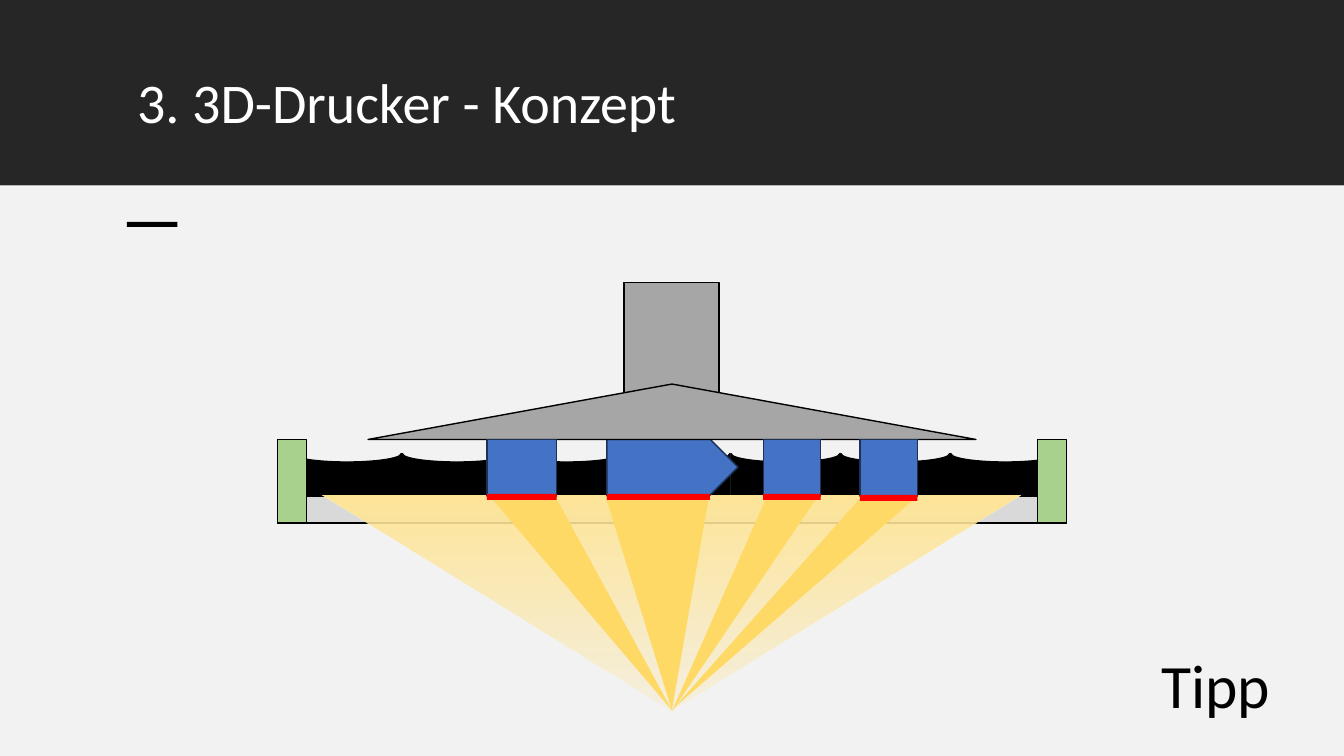
from lxml import etree
from pptx import Presentation
from pptx import util as u
from pptx.dml.color import RGBColor
from pptx.enum import shapes, text
from pptx.oxml import ns

PX = 9144
KIND = shapes.MSO_SHAPE

deck = Presentation()
deck.slide_width, deck.slide_height = 1333 * PX, 750 * PX
page = deck.slides.add_slide(deck.slide_layouts[5])


def add_part(kind, left, top, width, height, fill, line=None, turn=0, flip=False):
    part = page.shapes.add_shape(kind, left * PX, top * PX, width * PX, height * PX)
    part.shadow.inherit = False
    part.fill.solid()
    part.fill.fore_color.rgb = RGBColor.from_string(fill)
    if line:
        part.line.color.rgb = RGBColor.from_string(line)
        part.line.width = u.Pt(1)
    else:
        part.line.fill.background()
    part.rotation = turn
    if flip:
        part._element.spPr.xfrm.set("flipV", "1")
    return part


def write(box, left, top, width, height, words, size, color):
    box.left, box.top, box.width, box.height = left * PX, top * PX, width * PX, height * PX
    frame = box.text_frame
    frame.word_wrap = True
    frame.auto_size = text.MSO_AUTO_SIZE.NONE
    frame.vertical_anchor = text.MSO_ANCHOR.TOP
    frame.text = words
    para = frame.paragraphs[0]
    para.alignment = text.PP_ALIGN.LEFT
    para.line_spacing = 0.9
    para.font.name = "Calibri"
    para.font.size = u.Pt(size)
    para.font.color.rgb = RGBColor.from_string(color)


band = add_part(KIND.RECTANGLE, 0, -1, 1333, 185, "262626")
page.shapes._spTree.insert(2, band._element)
write(page.shapes.title, 126, 70, 1081, 98, "3. 3D-Drucker - Konzept", 40, "FFFFFF")
add_part(KIND.RECTANGLE, 0, 185, 1333, 565, "F2F2F2")
add_part(KIND.RECTANGLE, 126, 220, 50, 5, "000000")

for index in range(7):
    left = round(319 + index * 108.8)
    add_part(KIND.FLOWCHART_STORED_DATA, left, 421, 50, 108, "000000", "000000", 270)

add_part(KIND.RECTANGLE, 275, 492, 783, 27, "D9D9D9", "000000")
for left in (1002, 248):
    add_part(KIND.RECTANGLE, left, 463, 83, 29, "A9D18E", "000000", 90)

light = add_part(KIND.ISOSCELES_TRIANGLE, 320, 492, 692, 213, "FFE699", flip=True)
light.fill.gradient()
light.fill.gradient_angle = 90
for stop in light.fill.gradient_stops:
    stop.color.rgb = RGBColor.from_string("FFE699")
last_color = light._element.spPr.findall(".//" + ns.qn("a:srgbClr"))[-1]
etree.SubElement(last_color, ns.qn("a:alpha"), val="20000")

add_part(KIND.RECTANGLE, 619, 280, 94, 114, "A6A6A6", "000000")
add_part(KIND.ISOSCELES_TRIANGLE, 608, 491, 103, 214, "FFD966", turn=356.3, flip=True)
add_part(KIND.PENTAGON, 602, 435, 130, 57, "4472C4", "1D3155")
add_part(KIND.ISOSCELES_TRIANGLE, 365, 381, 603, 55, "A6A6A6", "000000")
add_part(KIND.RECTANGLE, 602, 490, 102, 6, "FF0000")

beams = [(706, 461, 47, 262, 29), (761, 431, 41, 319, 45.3), (558, 448, 58, 282, 325.5)]
for left, top, width, height, turn in beams:
    add_part(KIND.ISOSCELES_TRIANGLE, left, top, width, height, "FFD966", turn=turn, flip=True)

for left, width, layer_top in [(757, 57, 490), (853, 57, 491), (483, 69, 490)]:
    add_part(KIND.RECTANGLE, left, 436, width, 56, "4472C4", "1D3155")
    add_part(KIND.RECTANGLE, left, layer_top, width, 6, "FF0000")

tip = page.shapes.add_textbox(0, 0, PX, PX)
write(tip, 1142, 645, 156, 78, "Tipp", 44, "000000")

deck.save("out.pptx")
